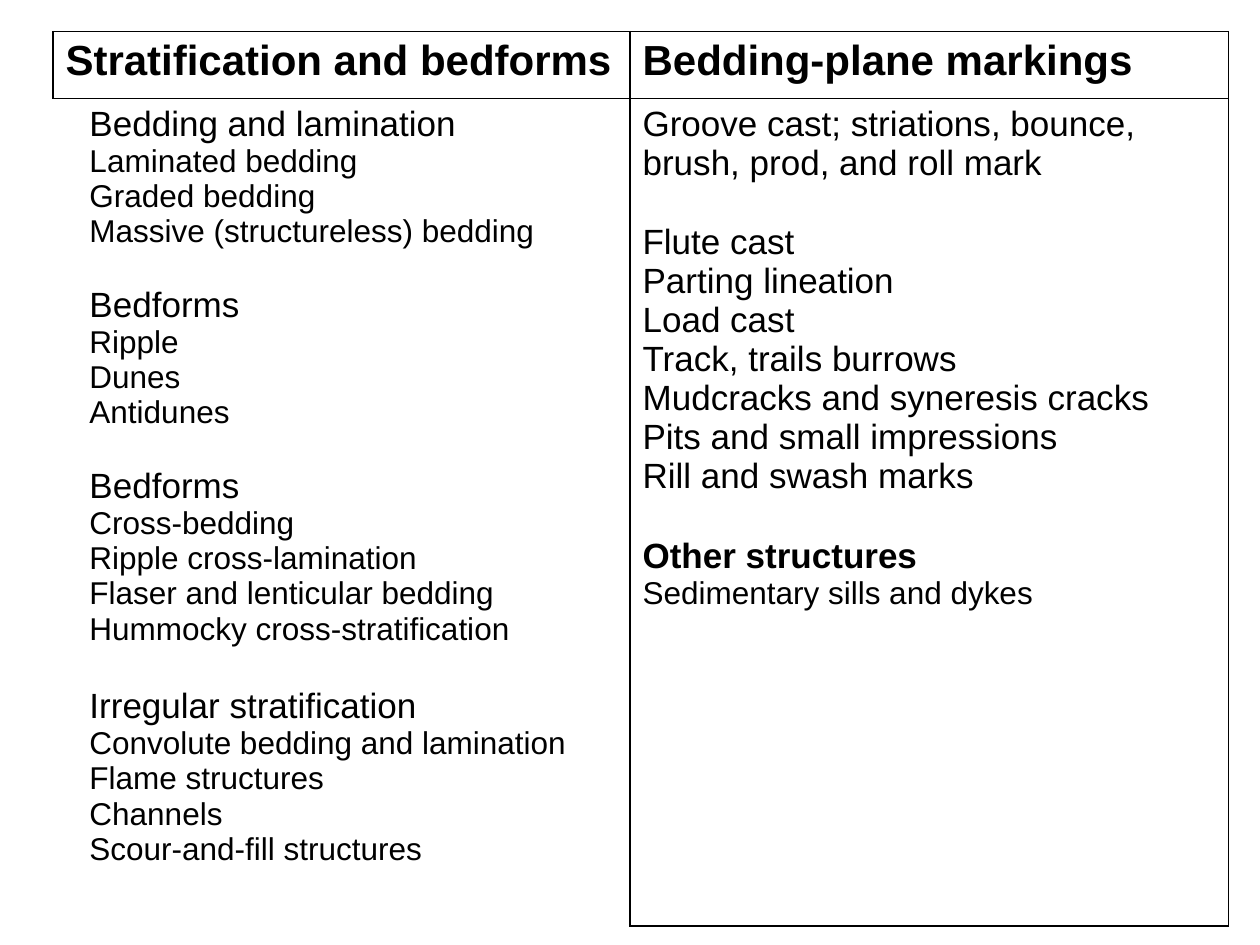
"""Build a slide with a two-column table of sedimentary structures."""
from dataclasses import dataclass

from lxml.etree import SubElement
from pptx import Presentation
from pptx.dml.color import RGBColor
from pptx.oxml.ns import qn
from pptx.util import Inches, Pt


@dataclass(frozen=True)
class Theme:
    font: str = "Arial"
    ink: str = "000000"
    title: int = 24
    head: int = 20
    item: int = 18
    border: int = 1


theme = Theme()

HEADERS = ["Stratification and bedforms", "Bedding-plane markings"]
STRATIFICATION = [
    ("Bedding and lamination",
     ["Laminated bedding", "Graded bedding", "Massive (structureless) bedding"]),
    ("Bedforms", ["Ripple", "Dunes", "Antidunes"]),
    ("Bedforms",
     ["Cross-bedding", "Ripple cross-lamination",
      "Flaser and lenticular bedding", "Hummocky cross-stratification"]),
    ("Irregular stratification",
     ["Convolute bedding and lamination", "Flame structures", "Channels",
      "Scour-and-fill structures"]),
]
GROUP_GAPS = [0, 20.7, 20.7, 23]
MARKINGS = [
    "Flute cast", "Parting lineation", "Load cast", "Track, trails burrows",
    "Mudcracks and syneresis cracks", "Pits and small impressions",
    "Rill and swash marks",
]
MARKING_GAP = 23


def add_line(cell, text, size, bold=False, gap=0, indent=0):
    tf = cell.text_frame
    p = tf.paragraphs[0] if not tf.text else tf.add_paragraph()
    if gap:
        p.space_before = Pt(gap)
    if indent:
        pPr = p._p.get_or_add_pPr()
        pPr.set("marL", "0")
        pPr.set("indent", str(Inches(indent)))
    r = p.add_run()
    r.text = text
    r.font.name = theme.font
    r.font.size = Pt(size)
    r.font.bold = bold
    r.font.color.rgb = RGBColor.from_string(theme.ink)


def set_borders(cell, sides):
    tcPr = cell._tc.get_or_add_tcPr()
    for i, side in enumerate("LRTB"):
        ln = SubElement(tcPr, qn(f"a:ln{side}"), w=str(Pt(theme.border)))
        tcPr.insert(i, ln)
        if side in sides:
            fill = SubElement(ln, qn("a:solidFill"))
            SubElement(fill, qn("a:srgbClr"), val=theme.ink)
        else:
            SubElement(ln, qn("a:noFill"))


prs = Presentation()
prs.slide_width, prs.slide_height = Inches(10), Inches(7.5)
s = prs.slides.add_slide(prs.slide_layouts[6])

table = s.shapes.add_table(
    2, 2, Inches(0.42), Inches(0.25), Inches(9.33), Inches(7.1)).table
table.first_row = False
table.horz_banding = False
for column, width in zip(table.columns, [4.58, 4.75]):
    column.width = Inches(width)
for row, height in zip(table.rows, [0.53, 6.57]):
    row.height = Inches(height)

for cell, sides in zip(table.iter_cells(), ["LRTB", "LRTB", "RT", "LRTB"]):
    cell.fill.background()
    set_borders(cell, sides)

for i, header in enumerate(HEADERS):
    add_line(table.cell(0, i), header, theme.title, bold=True)

left, right = table.cell(1, 0), table.cell(1, 1)
for (heading, items), gap in zip(STRATIFICATION, GROUP_GAPS):
    add_line(left, heading, theme.head, gap=gap, indent=0.19)
    for item in items:
        add_line(left, item, theme.item, indent=0.19)

add_line(right, "Groove cast; striations, bounce, brush, prod, and roll mark", theme.head)
for i, marking in enumerate(MARKINGS):
    add_line(right, marking, theme.head, gap=0 if i else MARKING_GAP)
add_line(right, "Other structures", theme.head, bold=True, gap=MARKING_GAP)
add_line(right, "Sedimentary sills and dykes", theme.item)

prs.save("out.pptx")
